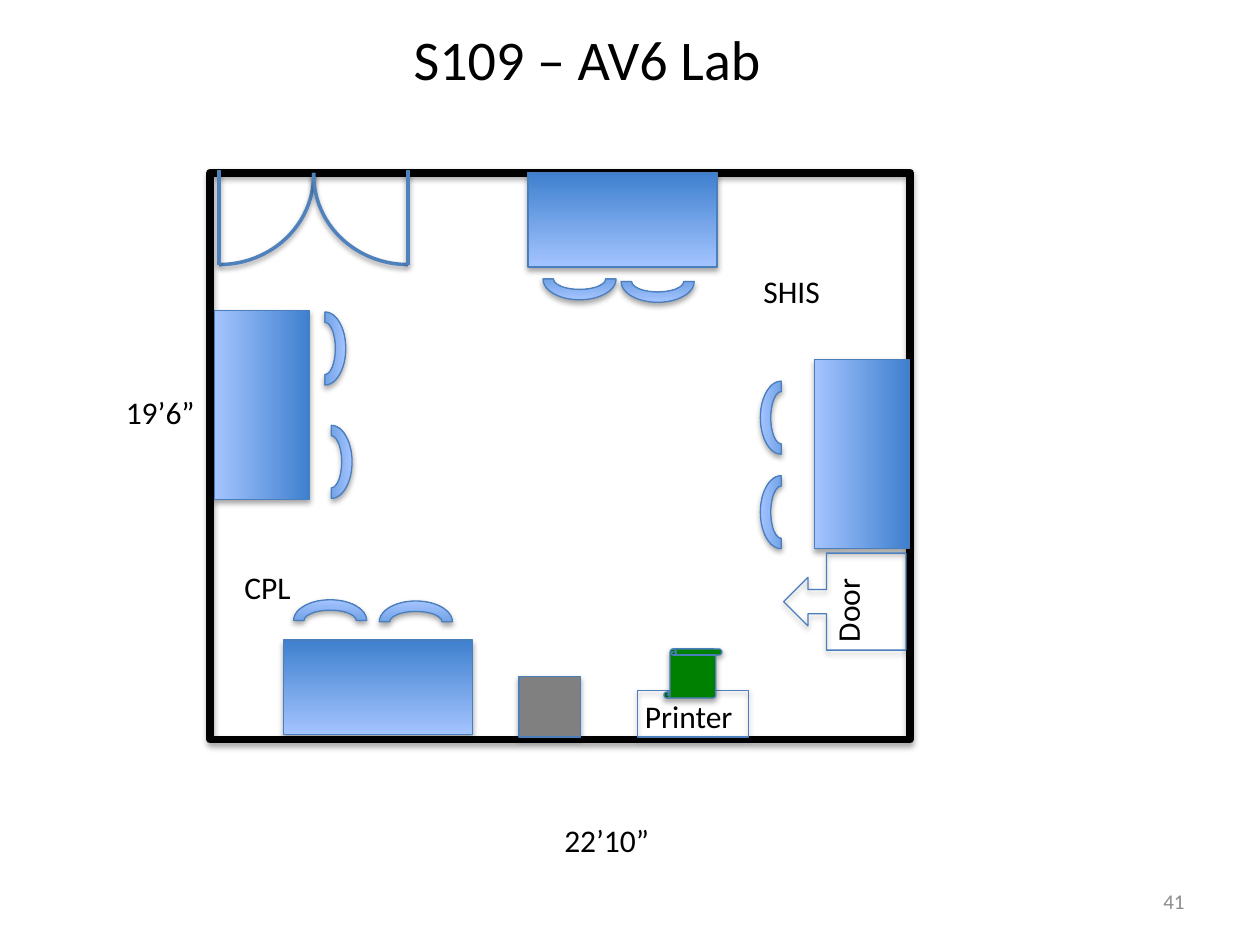
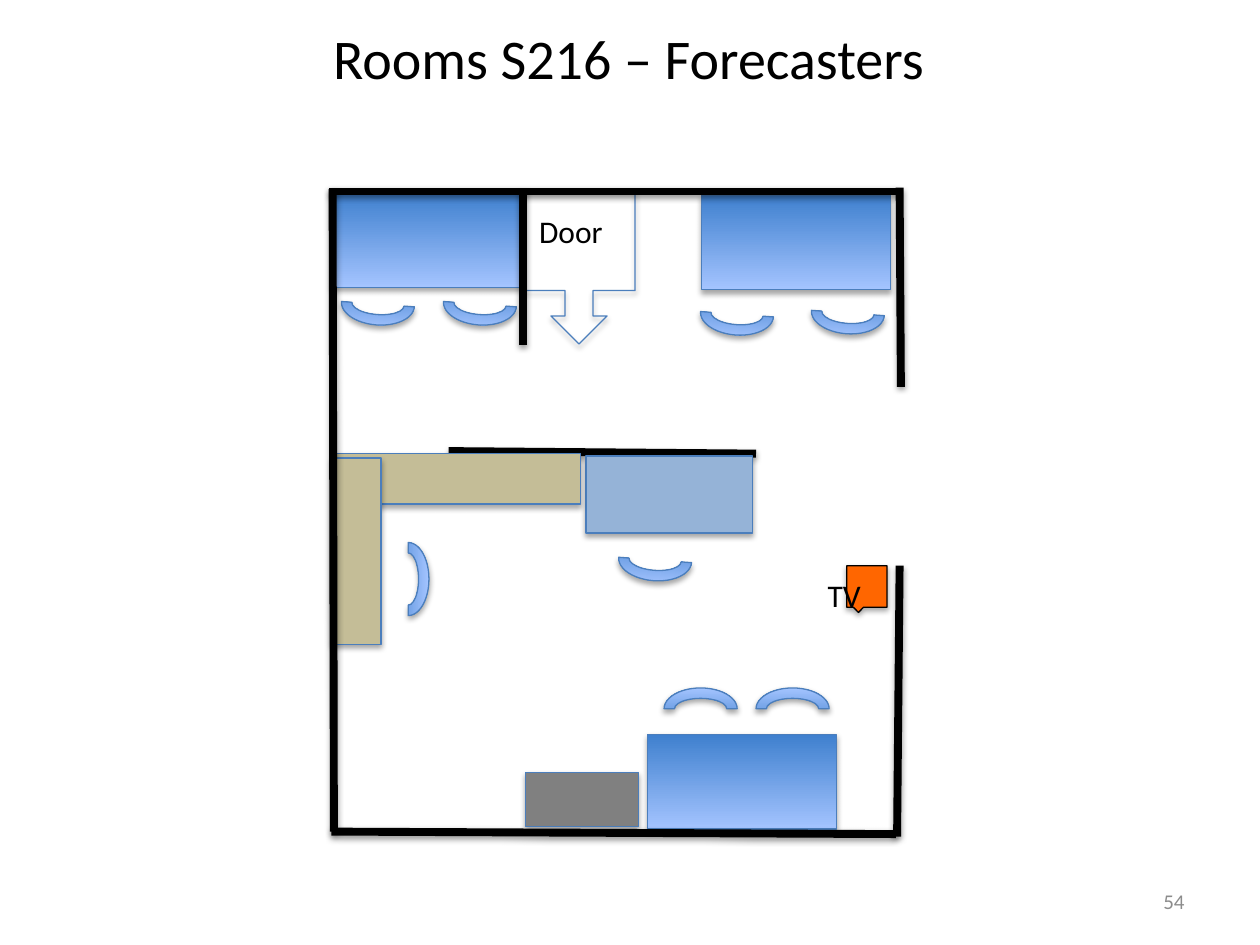
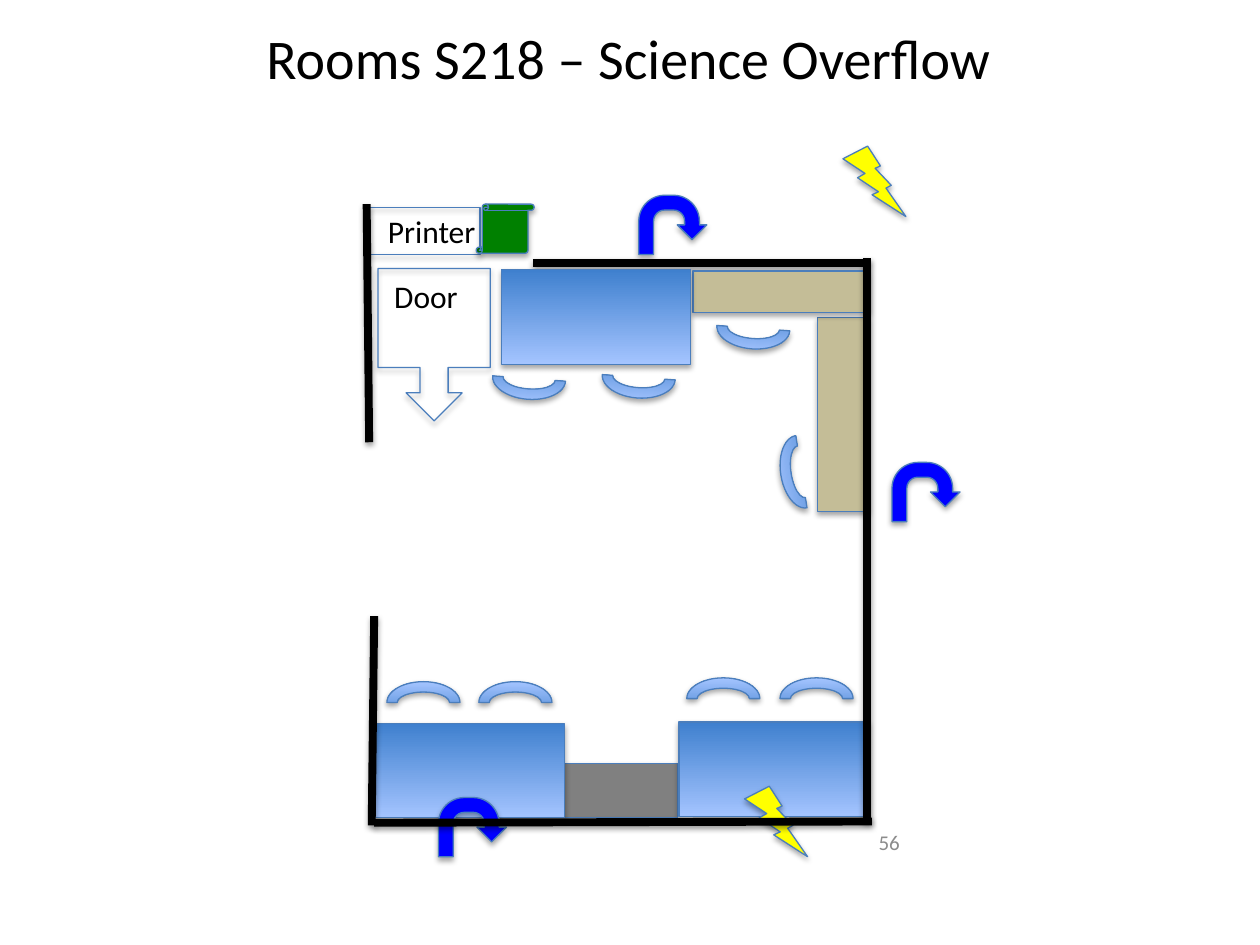
from lxml import etree
from pptx import Presentation
from pptx import util as u
from pptx.dml.color import RGBColor
from pptx.enum import shapes, text
from pptx.oxml.ns import qn

COLUMNS, ROWS = 100, 75
BLACK = RGBColor(0x00, 0x00, 0x00)
NUMBER_GREY = RGBColor(0x8C, 0x8C, 0x8C)
OUTLINE = RGBColor(0x4B, 0x7E, 0xBC)
DOOR_BLUE = RGBColor(0x4F, 0x81, 0xBD)
DEEP_BLUE = RGBColor(0x3F, 0x80, 0xCE)
PALE_BLUE = RGBColor(0xA4, 0xC4, 0xFF)
TABLE_BLUE = RGBColor(0x95, 0xB3, 0xD7)
CABINET_GREY = RGBColor(0x80, 0x80, 0x80)
COUNTER_TAN = RGBColor(0xC4, 0xBD, 0x97)
PRINTER_GREEN = RGBColor(0x00, 0x80, 0x00)
TV_ORANGE = RGBColor(0xFF, 0x66, 0x00)
POWER_YELLOW = RGBColor(0xFF, 0xFF, 0x00)
ARROW_BLUE = RGBColor(0x00, 0x00, 0xFF)
FURNITURE = (DEEP_BLUE, PALE_BLUE)
FONT = "Calibri"
KIND = shapes.MSO_SHAPE
TILT = 4.2


def cast_shadow(effects, opacity, distance):
    """Add a soft shadow that falls straight down."""
    outer = etree.SubElement(effects, qn("a:outerShdw"), blurRad="40000",
                             dist=str(distance), dir="5400000", rotWithShape="0")
    colour = etree.SubElement(outer, qn("a:srgbClr"), val=str(BLACK))
    etree.SubElement(colour, qn("a:alpha"), val=str(opacity * 1000))


class FloorPlan:
    """Draws rooms; lengths are columns and rows of a 100 by 75 grid."""

    def __init__(self):
        self.deck = Presentation()
        self.deck.slide_width, self.deck.slide_height = u.Inches(10), u.Inches(7.5)
        self.column = self.deck.slide_width / COLUMNS
        self.row = self.deck.slide_height / ROWS
        self.slide = None

    def room(self, title, left=4.9, width=90, height=12.5, bottom_inset=4):
        self.slide = self.deck.slides.add_slide(self.deck.slide_layouts[6])
        heading = self.label(title, left, 0, width, height, size=32, wrap=True,
                             align=text.PP_ALIGN.CENTER, anchor=text.MSO_ANCHOR.MIDDLE)
        heading.text_frame.margin_bottom = round(bottom_inset * self.row)

    def place(self, *lengths):
        """Turn alternating columns and rows into slide lengths."""
        return [round(length * (self.row if i % 2 else self.column))
                for i, length in enumerate(lengths)]

    def label(self, words, left, top, width, height=4, size=18, colour=BLACK, wrap=False,
              turn=0, align=text.PP_ALIGN.LEFT, anchor=text.MSO_ANCHOR.TOP):
        box = self.slide.shapes.add_textbox(*self.place(left, top, width, height))
        box.rotation = turn
        frame = box.text_frame
        frame.word_wrap, frame.vertical_anchor = wrap, anchor
        frame.text = words
        line = frame.paragraphs[0]
        line.alignment = align
        line.font.name, line.font.size, line.font.color.rgb = FONT, u.Pt(size), colour
        return box

    def page_number(self, number, left=71.7, top=69.5):
        self.label(str(number), left, top, 23.3, size=12, colour=NUMBER_GREY, wrap=True,
                   align=text.PP_ALIGN.RIGHT, anchor=text.MSO_ANCHOR.MIDDLE)

    def item(self, kind, left, top, width, height, fill=None, turn=0, flip="",
             outline=OUTLINE, weight=0.75, shade=(35, 23000)):
        """Draw a shape; fill is a colour, a pair for a gradient, or None."""
        piece = self.slide.shapes.add_shape(kind, *self.place(left, top, width, height))
        piece.rotation = turn
        for axis in flip:
            piece._element.spPr.xfrm.set("flip" + axis, "1")
        if fill is None:
            piece.fill.background()
        elif fill is FURNITURE:
            piece.fill.gradient()
            piece.fill.gradient_angle = 90
            for stop, colour, position in zip(piece.fill.gradient_stops, fill, (0, 1)):
                stop.color.rgb, stop.position = colour, position
        else:
            piece.fill.solid()
            piece.fill.fore_color.rgb = fill
        piece.line.color.rgb, piece.line.width = outline, u.Pt(weight)
        piece.shadow.inherit = False
        cast_shadow(piece._element.spPr.find(qn("a:effectLst")), *shade)
        return piece

    def box(self, left, top, width, height, fill=None):
        return self.item(KIND.RECTANGLE, left, top, width, height, fill)

    def desk(self, left, top, turn=180):
        self.item(KIND.RECTANGLE, left, top, 15, 7.5, FURNITURE, turn,
                  "H" if turn == 180 else "")

    def chairs(self, *spots, turn=0):
        for left, top in spots:
            self.item(KIND.BLOCK_ARC, left, top, 5.8, 3.3, FURNITURE, turn, "HV")

    def wall(self, *ends, colour=BLACK, weight=4.5):
        line = self.slide.shapes.add_connector(shapes.MSO_CONNECTOR.STRAIGHT,
                                               *self.place(*ends))
        line.line.color.rgb, line.line.width = colour, u.Pt(weight)
        effects = etree.SubElement(line._element.spPr, qn("a:effectLst"))
        cast_shadow(effects, 38, 20000)

    def double_door(self, left, top):
        for side, flip in enumerate(("V", "HV")):
            hinge = left + 15 * side
            leaf = self.item(KIND.ARC, hinge - 7.5, top - 6.7, 15, 14.2, flip=flip,
                             outline=DOOR_BLUE, weight=2, shade=(38, 20000))
            leaf.adjustments[0], leaf.adjustments[1] = 162, 0.786
            self.wall(hinge, top + 7.5, hinge, top, colour=DOOR_BLUE, weight=2)

    def entrance(self, left, top, label_drop):
        """Draw a door arrow that points down, with its label."""
        self.item(KIND.UP_ARROW_CALLOUT, left, top, 8.9, 12.1, turn=180)
        self.label("Door", left + 0.3, top + label_drop, 8.2, wrap=True)

    def printer(self, stand, scroll, caption):
        self.box(*stand, 8.8, 3.7)
        self.item(KIND.VERTICAL_SCROLL, *scroll, 4.6, 3.9, PRINTER_GREEN)
        self.label("Printer", *caption, 9.1)

    def power(self, left, top):
        self.item(KIND.LIGHTNING_BOLT, left, top, 5, 5.6, POWER_YELLOW)

    def return_arrow(self, left, top):
        self.item(KIND.U_TURN_ARROW, left, top, 5.4, 4.7, ARROW_BLUE)

    def counter(self, left, top, width, height, turn=180):
        self.item(KIND.RECTANGLE, left, top, width, height, COUNTER_TAN, turn, "H")


def draw_lab(plan):
    plan.room("S109 – AV6 Lab", 7.8, 77.6, 9.3, bottom_inset=0.5)
    plan.item(KIND.RECTANGLE, 16.7, 13.7, 55.5, 45, outline=BLACK, weight=4.5)
    plan.double_door(17.4, 13.5)
    plan.chairs((30.1, 47.7), (23.3, 47.6), turn=180)
    plan.chairs((23.4, 35), (22.9, 26), turn=270)
    plan.label("CPL", 18.4, 44.6, 5.8)
    plan.desk(60.9, 32.3, turn=270)
    plan.chairs((59.1, 31.5), (59.1, 39), turn=90)
    plan.label("SHIS", 59.6, 21.1, 6.5)
    plan.label("19’6”", 9, 30.7, 7.5)
    plan.label("22’10”", 43.8, 64.7, 8.8)
    plan.desk(22.5, 50.8)
    plan.item(KIND.UP_ARROW_CALLOUT, 63.2, 42.9, 7.7, 9.7, turn=270)
    plan.label("Door", 63.7, 46.4, 7.1, turn=270)
    plan.desk(41.9, 13.7)
    plan.chairs((43.1, 20.5), (49.3, 20.7))
    plan.box(41.2, 53.7, 4.9, 4.8, CABINET_GREY)
    plan.desk(13.3, 28.4, turn=270)
    plan.printer((50.6, 54.8), (52.7, 51.5), (50.2, 54.8))
    plan.page_number(41)


def draw_forecasters(plan):
    plan.room("Rooms S216 – Forecasters")
    plan.desk(51.4, 58.3)
    plan.entrance(41.5, 15.2, 1.1)
    plan.box(41.7, 61.3, 9, 4.3, CABINET_GREY)
    plan.wall(35.6, 35.8, 60, 36)
    plan.wall(71.2, 66.4, 71.4, 44.9)
    plan.wall(71.5, 30.7, 71.4, 14.9)
    plan.chairs((60, 54.6), (52.7, 54.6), turn=180)
    plan.box(46.5, 36.2, 13.2, 6.1, TABLE_BLUE)
    plan.item(KIND.RECTANGULAR_CALLOUT, 67.2, 44.9, 3.2, 3.3, TV_ORANGE, outline=BLACK)
    plan.label("TV", 64.7, 45.2, 4.7)
    plan.counter(26.7, 36, 19.4, 4)
    plan.counter(20.9, 41.8, 14.8, 3.9, turn=90)
    plan.chairs((29.5, 44.3), turn=270)
    plan.desk(26.3, 15.3)
    plan.desk(55.7, 15.5)
    plan.chairs((64.4, 23.2), (35.2, 22.5), (49.1, 42.8), (55.6, 23.3), (27.1, 22.5),
                turn=TILT)
    plan.wall(26.1, 15.2, 71.2, 15.2)
    plan.wall(26.3, 66, 71.1, 66.2)
    plan.wall(26.5, 66, 26.4, 15)
    plan.page_number(54)
    plan.wall(41.5, 27.4, 41.5, 15)


def draw_overflow(plan):
    plan.room("Rooms S218 – Science Overflow")
    plan.chairs((38, 54.1), (30.7, 54.1), turn=180)
    plan.box(44.8, 60.6, 9, 4.3, CABINET_GREY)
    plan.printer((29.3, 16.5), (37.8, 16.2), (29.8, 16.3))
    plan.power(66.9, 11.6)
    plan.entrance(30, 21.3, 0.2)
    plan.desk(29.8, 57.4)
    plan.desk(53.9, 57.3)
    plan.chairs((60.7, 35.8), turn=81.2)
    plan.wall(42.3, 20.9, 69, 20.9)
    plan.return_arrow(34.8, 63.3)
    plan.power(59.1, 62.4)
    plan.chairs((61.9, 53.8), (54.5, 53.8), turn=180)
    plan.counter(59.2, 30.9, 15.4, 4, turn=90)
    plan.counter(55, 21.5, 14, 3.3)
    plan.page_number(56, 49.1, 64.8)
    plan.desk(39.8, 21.4)
    plan.chairs((56.9, 24.4), (47.8, 28.3), (39.1, 28.4), turn=TILT)
    plan.wall(29.7, 65.3, 69.2, 65.2)
    plan.wall(68.8, 65.2, 68.8, 20.5)
    plan.wall(29.3, 35.1, 29.1, 16.2)
    plan.wall(29.5, 65.5, 29.7, 48.9)
    plan.return_arrow(50.7, 15.5)
    plan.return_arrow(70.8, 36.7)


def main():
    plan = FloorPlan()
    for draw in (draw_lab, draw_forecasters, draw_overflow):
        draw(plan)
    plan.deck.save("out.pptx")


if __name__ == "__main__":
    main()
